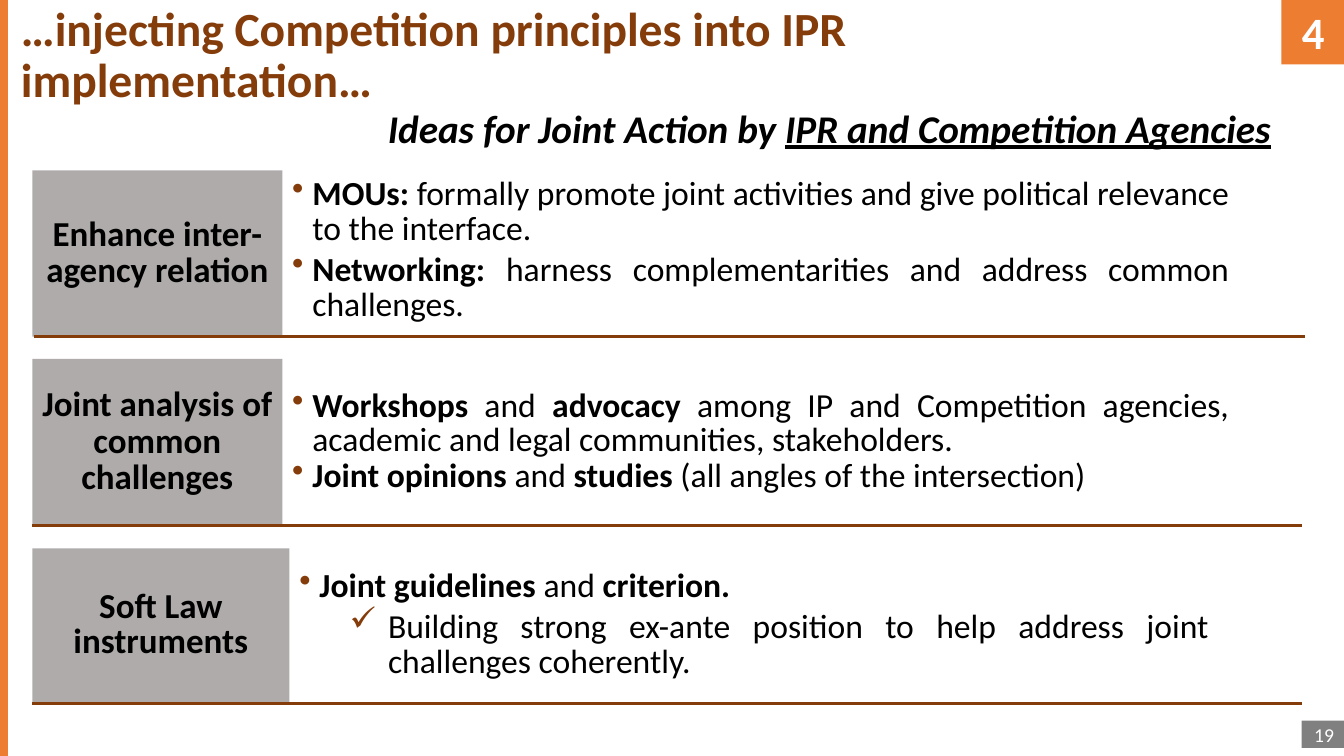
import pptx
import pptx.util
import pptx.dml.color
import pptx.enum.shapes
import pptx.enum.text
import pptx.oxml.ns
import lxml.etree

Inches = pptx.util.Inches
Pt = pptx.util.Pt
RGBColor = pptx.dml.color.RGBColor
ALIGN = pptx.enum.text.PP_ALIGN
ANCHOR = pptx.enum.text.MSO_ANCHOR
qn = pptx.oxml.ns.qn

ORANGE = RGBColor(0xED, 0x7D, 0x31)
BROWN = RGBColor(0x84, 0x3C, 0x0B)
LABEL_GRAY = RGBColor(0xAF, 0xAB, 0xAB)
PAGE_GRAY = RGBColor(0x80, 0x80, 0x80)
BLACK = RGBColor(0, 0, 0)
WHITE = RGBColor(0xFF, 0xFF, 0xFF)

prs = pptx.Presentation()
prs.slide_width, prs.slide_height = Inches(13.33), Inches(7.5)
s = prs.slides.add_slide(prs.slide_layouts[6])


def add_box(at, fill=None, anchor=ANCHOR.TOP):
    """Add a wrapping text box, or a filled rectangle when fill is given."""
    at = [Inches(v) for v in at]
    if fill is None:
        sp = s.shapes.add_textbox(*at)
    else:
        sp = s.shapes.add_shape(pptx.enum.shapes.MSO_SHAPE.RECTANGLE, *at)
        sp.shadow.inherit = False
        sp.fill.solid()
        sp.fill.fore_color.rgb = fill
        sp.line.fill.background()
    sp.text_frame.word_wrap = True
    sp.text_frame.vertical_anchor = anchor
    return sp.text_frame


def add_runs(p, runs, size, color=BLACK, **paragraph_format):
    """Fill a paragraph with (text, font attributes) runs."""
    for name, value in paragraph_format.items():
        setattr(p, name, value)
    for text, font in runs:
        r = p.add_run()
        r.text = text
        r.font.name, r.font.size = "Calibri", Pt(size)
        r.font.color.rgb = color
        for name, value in font.items():
            setattr(r.font, name, value)


BOLD, PLAIN = {"bold": True}, {"bold": False}

# Page frame and headings
tf = add_box((12.91, 7.15, 0.42, 0.27), PAGE_GRAY, ANCHOR.MIDDLE)
add_runs(tf.paragraphs[0], [("19", PLAIN)], 14, WHITE, alignment=ALIGN.RIGHT)

tf = add_box((12.71, 0, 0.63, 0.64), ORANGE)
add_runs(tf.paragraphs[0], [("4", BOLD)], 32, WHITE, alignment=ALIGN.CENTER)

tf = add_box((0.11, 0, 11.09, 1))
add_runs(tf.paragraphs[0],
         [("…injecting Competition principles into IPR implementation…", BOLD)],
         34, BROWN, line_spacing=0.9)

tf = add_box((3.55, 0.92, 9.35, 0.69), anchor=ANCHOR.MIDDLE)
add_runs(tf.paragraphs[0],
         [("Ideas for Joint Action by ", {"bold": True, "italic": True}),
          ("IPR and Competition Agencies",
           {"bold": True, "italic": True, "underline": True})],
         28, alignment=ALIGN.CENTER)

# Rows: label, its box, its line spacing, body box, body spacing, gap, bullets
DOT, CHECK = ("•", 0, 0.2, 0.2), ("✓", 1, 0.88, 0.38)
rows = [
    ("Enhance inter-agency relation", (0.32, 1.69, 2.48, 1.65), 26,
     (2.8, 1.71, 9.49, 1.56), 25, 2, [
         (DOT, [("MOUs: ", BOLD),
                ("formally promote joint activities and give political "
                 "relevance to the interface.", PLAIN)]),
         (DOT, [("Networking: ", BOLD),
                ("harness complementarities and address common challenges.",
                 PLAIN)])]),
    ("Joint analysis of common challenges", (0.32, 3.56, 2.48, 1.65), 26,
     (2.8, 3.83, 9.49, 1.14), 24, 1, [
         (DOT, [("Workshops", BOLD), (" and ", PLAIN), ("advocacy", BOLD),
                (" among IP and Competition agencies, academic and legal "
                 "communities, stakeholders.", PLAIN)]),
         (DOT, [("Joint opinions ", BOLD), ("and", PLAIN), (" studies ", BOLD),
                ("(all angles of the intersection)", PLAIN)])]),
    ("Soft Law instruments", (0.32, 5.44, 2.55, 1.54), 25,
     (2.87, 5.6, 9.22, 1.62), 25, 2, [
         (DOT, [("Joint guidelines ", BOLD), ("and ", PLAIN),
                ("criterion.", BOLD)]),
         (CHECK, [("Building strong ex-ante position to help address joint "
                   "challenges coherently.", PLAIN)])]),
]
for label, label_at, label_spacing, body_at, spacing, gap, bullets in rows:
    tf = add_box(label_at, LABEL_GRAY, ANCHOR.MIDDLE)
    add_runs(tf.paragraphs[0], [(label, BOLD)], 25, alignment=ALIGN.CENTER,
             line_spacing=Pt(label_spacing))

    tf = add_box(body_at)
    for i, ((mark, level, margin, hang), runs) in enumerate(bullets):
        p = tf.add_paragraph() if i else tf.paragraphs[0]
        pPr = p._p.get_or_add_pPr()
        pPr.set("marL", str(Inches(margin)))
        pPr.set("indent", str(-Inches(hang)))
        color = lxml.etree.SubElement(pPr, qn("a:buClr"))
        lxml.etree.SubElement(color, qn("a:srgbClr"), val=str(BROWN))
        lxml.etree.SubElement(pPr, qn("a:buChar"), char=mark)
        add_runs(p, runs, 24, level=level, alignment=ALIGN.JUSTIFY,
                 line_spacing=Pt(spacing), space_after=Pt(gap),
                 space_before=Pt(gap if i else 0))

# Left edge bar and the rule under each row
lines = [
    (0.04, 0, 0.04, 7.5, ORANGE, 6),
    (0.34, 3.34, 12.94, 3.34, BROWN, 2.25),
    (0.32, 5.21, 12.91, 5.21, BROWN, 2.25),
    (0.32, 6.98, 12.91, 6.98, BROWN, 2.25),
]
for *ends, color, width in lines:
    line = s.shapes.add_connector(pptx.enum.shapes.MSO_CONNECTOR.STRAIGHT,
                                  *[Inches(v) for v in ends])
    line.line.color.rgb = color
    line.line.width = Pt(width)
    lxml.etree.SubElement(line._element.spPr, qn("a:effectLst"))

prs.save("out.pptx")
